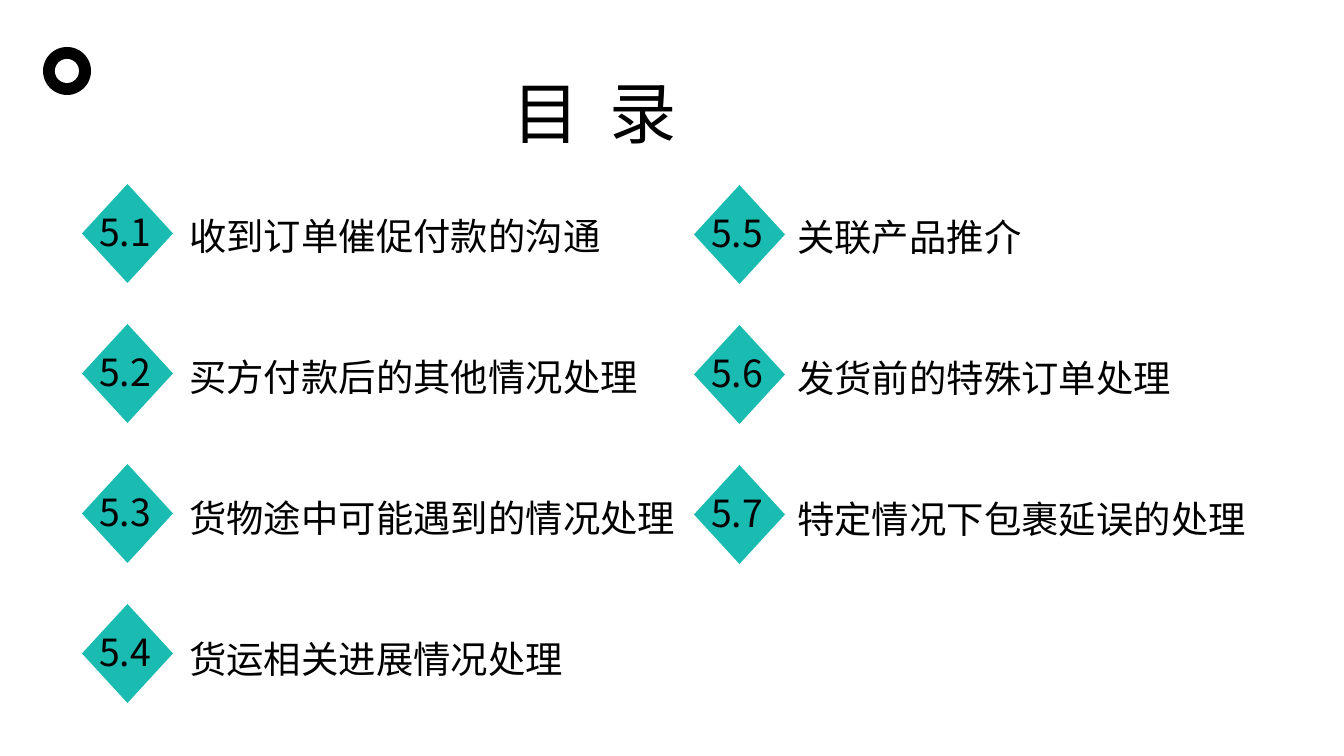
from lxml import etree
from pptx import Presentation
from pptx.dml.color import RGBColor
from pptx.enum.shapes import MSO_SHAPE
from pptx.enum.text import MSO_AUTO_SIZE
from pptx.oxml.ns import qn
from pptx.util import Emu, Pt

ELLIPSE = MSO_SHAPE.OVAL
DIAMOND = MSO_SHAPE.DIAMOND
GROW = MSO_AUTO_SIZE.SHAPE_TO_FIT_TEXT

EMU_PER_PX = 914400 / 134.4
FONT = "Noto Sans CJK SC"
BLACK, WHITE, TEAL = "000000", "FFFFFF", "1ABBB1"

ROW_PITCH, TOPIC_PITCH = 140, 141
COLUMNS = [
    (82, 184, 176, 207, [
        "收到订单催促付款的沟通",
        "买方付款后的其他情况处理",
        "货物途中可能遇到的情况处理",
        "货运相关进展情况处理",
    ]),
    (694, 185, 784, 208, [
        "关联产品推介",
        "发货前的特殊订单处理",
        "特定情况下包裹延误的处理",
    ]),
]


def px(length):
    return Emu(round(length * EMU_PER_PX))


def color(hex_code):
    return RGBColor.from_string(hex_code)


class SlideBuilder:
    """Holds the text style and the slide being filled."""

    def __init__(self, slide, font=FONT, ink=BLACK):
        self.slide = slide
        self.font = font
        self.ink = ink

    def shape(self, preset, left, top, width, height, fill):
        shape = self.slide.shapes.add_shape(
            preset, px(left), px(top), px(width), px(height))
        shape.shadow.inherit = False
        shape.fill.solid()
        shape.fill.fore_color.rgb = color(fill)
        shape.line.fill.background()

    def text(self, runs, left, top, width, height, size):
        box = self.slide.shapes.add_textbox(
            px(left), px(top), px(width), px(height))
        frame = box.text_frame
        frame.word_wrap = True
        frame.auto_size = GROW
        for wording, spacing in runs:
            run = frame.paragraphs[0].add_run()
            run.text = wording
            run.font.size = Pt(size)
            run.font.color.rgb = color(self.ink)
            run.font.name = self.font
            properties = run._r.get_or_add_rPr()
            etree.SubElement(properties, qn("a:ea"), typeface=self.font)
            if spacing:
                properties.set("spc", str(spacing * 100))


def main():
    deck = Presentation()
    deck.slide_width, deck.slide_height = px(1344), px(756)
    builder = SlideBuilder(deck.slides.add_slide(deck.slide_layouts[6]))

    builder.shape(ELLIPSE, 43, 47, 48, 48, BLACK)
    builder.shape(ELLIPSE, 55, 59, 24, 24, WHITE)
    builder.text([("目", 0), (" ", 8), ("录", 0)], 499, 65, 276, 95, 36)

    number = 1
    for badge_left, badge_top, topic_left, topic_top, topics in COLUMNS:
        for row, topic in enumerate(topics):
            top = badge_top + row * ROW_PITCH
            builder.shape(DIAMOND, badge_left, top, 91, 99, TEAL)
            builder.text([(f"5.{number}", 0)], badge_left + 4, top + 19, 85, 59, 20)
            builder.text([(topic, 0)], topic_left, topic_top + row * TOPIC_PITCH,
                         516, 59, 20)
            number += 1

    deck.save("out.pptx")


if __name__ == "__main__":
    main()
